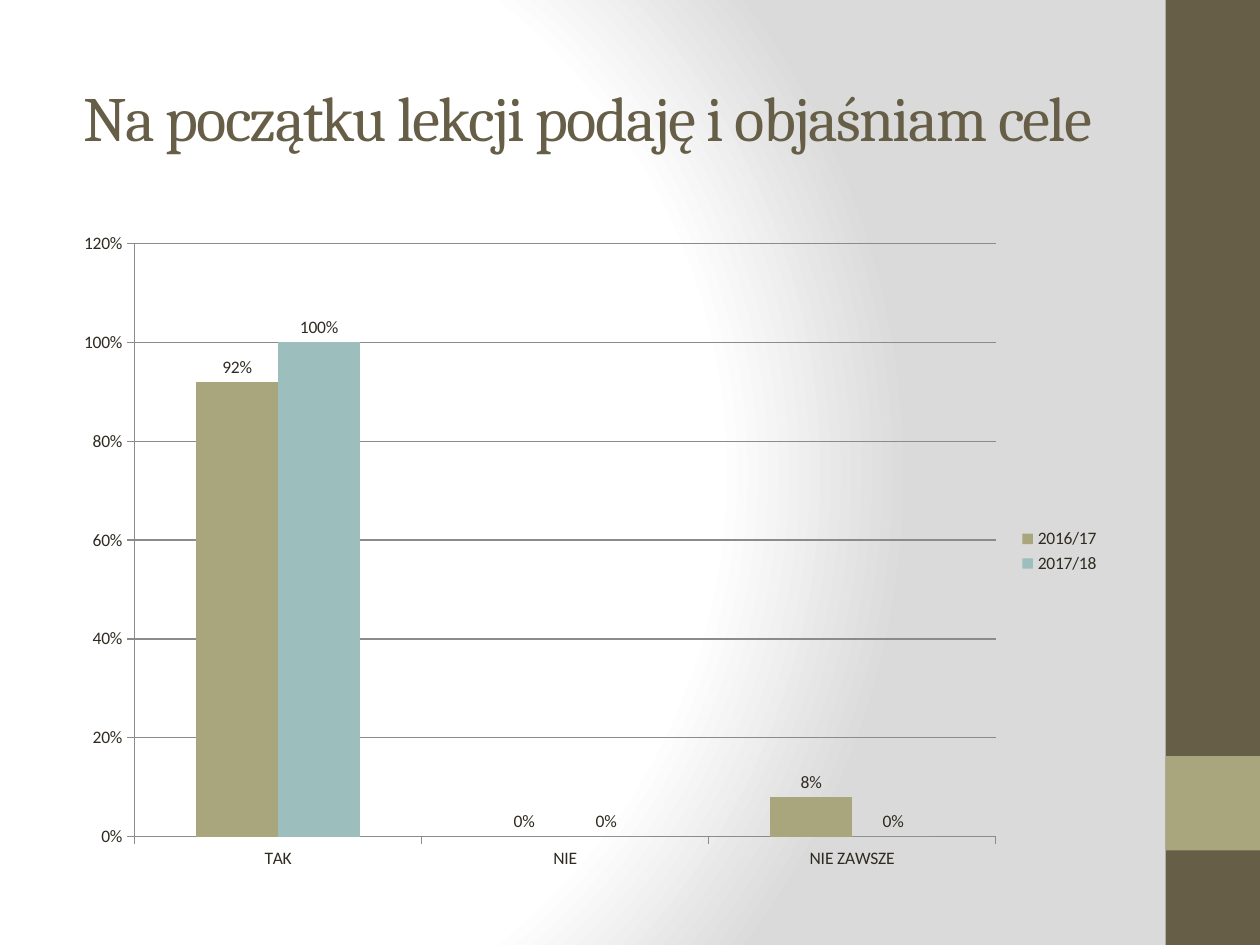
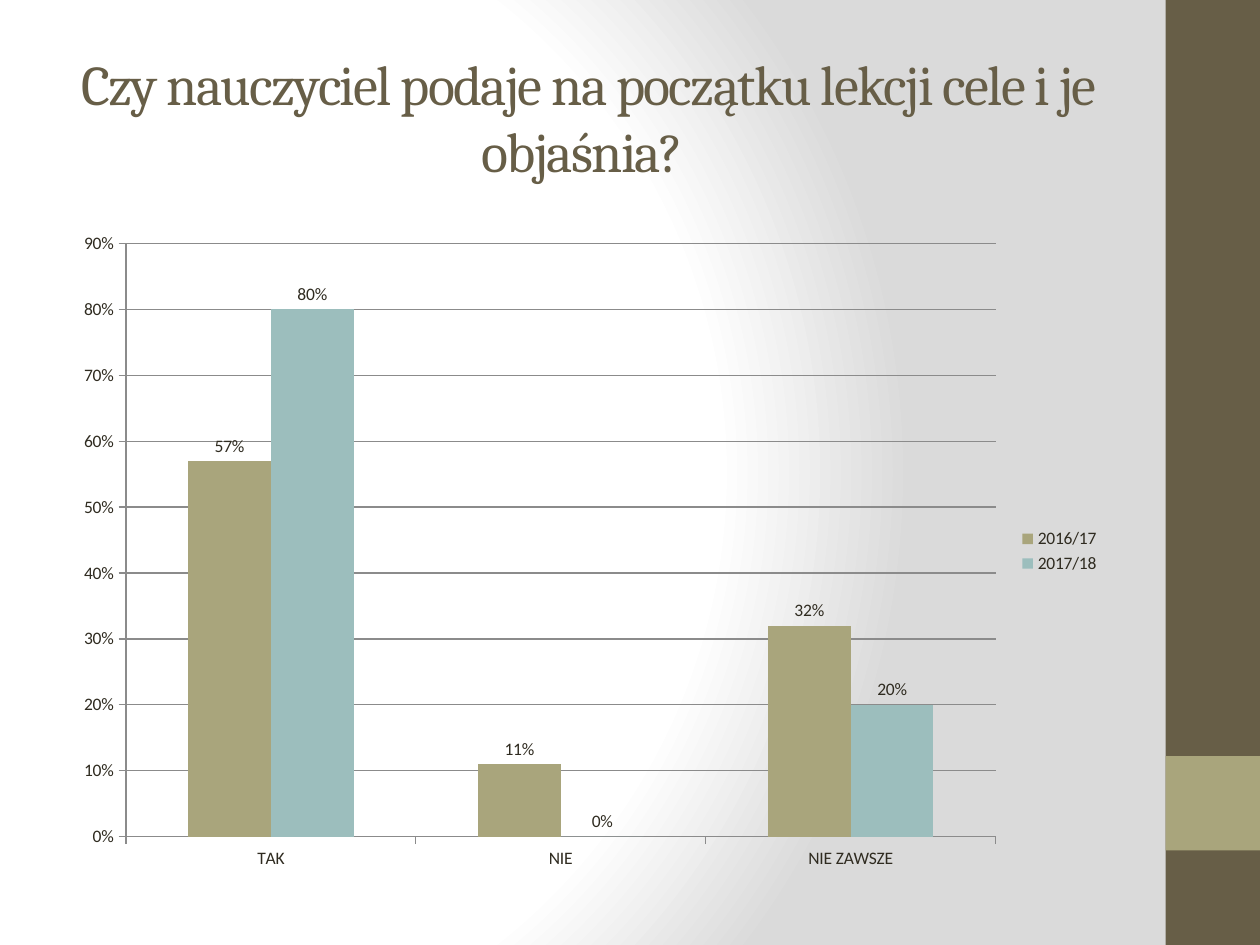
from dataclasses import dataclass

from lxml import etree
from pptx import Presentation
from pptx.chart.data import CategoryChartData
from pptx.dml.color import RGBColor
from pptx.enum.chart import XL_CHART_TYPE, XL_LABEL_POSITION, XL_LEGEND_POSITION, XL_TICK_MARK
from pptx.enum.shapes import MSO_SHAPE
from pptx.enum.text import MSO_ANCHOR, MSO_AUTO_SIZE, PP_ALIGN
from pptx.oxml import parse_xml
from pptx.oxml.ns import qn
from pptx.util import Inches, Pt

COLUMNS = XL_CHART_TYPE.COLUMN_CLUSTERED
LABEL_ABOVE = XL_LABEL_POSITION.OUTSIDE_END
LEGEND_RIGHT = XL_LEGEND_POSITION.RIGHT
TICK_OUT, TICK_NONE = XL_TICK_MARK.OUTSIDE, XL_TICK_MARK.NONE
RECTANGLE = MSO_SHAPE.RECTANGLE
MIDDLE, CENTER = MSO_ANCHOR.MIDDLE, PP_ALIGN.CENTER
NO_AUTOFIT = MSO_AUTO_SIZE.NONE
DRAWING_NS = "http://schemas.openxmlformats.org/drawingml/2006/main"

# The page is a grid of quarter-inch cells: 40 columns by 30 rows.
CELL = 0.25
PAGE_COLUMNS, PAGE_ROWS = 40, 30
CONTENT_LEFT, CONTENT_WIDTH = 2, 33.32
BAND_LEFT, BAND_WIDTH = 37, 3


@dataclass(frozen=True)
class Theme:
    heading_font: str = "Cambria"
    body_font: str = "Calibri"
    brown: str = "675E47"
    olive: str = "A9A57C"
    teal: str = "9CBEBD"
    ink: str = "2F2B20"
    rule: str = "8B8B8B"
    background_stops: tuple = ((0, "FFFFFF"), (75, "FFFFFF"), (100, "DADADA"))
    title_size: int = 36
    long_title_size: int = 32
    chart_size: int = 10
    rule_width: float = 0.75


THEME = Theme()
ANSWERS = ("TAK", "NIE", "NIE ZAWSZE")
YEARS = ("2016/17", "2017/18")
SURVEY = (
    {
        "title": "Na początku lekcji podaję i objaśniam cele",
        "title_size": THEME.title_size,
        "shares": ((0.92, 0, 0.08), (1, 0, 0)),
        "top": 1.2,
        "step": 0.2,
    },
    {
        "title": "Czy nauczyciel podaje na początku lekcji cele i je objaśnia? ",
        "title_size": THEME.long_title_size,
        "shares": ((0.57, 0.11, 0.32), (0.8, 0, 0.2)),
        "top": 0.9,
        "step": 0.1,
    },
)


def cells(*counts):
    return [Inches(count * CELL) for count in counts]


def style_font(font, name, size, color):
    font.name, font.size, font.bold = name, Pt(size), False
    font.color.rgb = RGBColor.from_string(color)


def write(frame, text, *, font, size, color, align, anchor, spacing=0):
    """Fill a text frame with one paragraph; spacing is in points per letter."""
    frame.word_wrap = True
    frame.auto_size = NO_AUTOFIT
    frame.vertical_anchor = anchor
    para = frame.paragraphs[0]
    para.alignment = align
    span = para.add_run()
    span.text = text
    style_font(span.font, font, size, color)
    span.font._element.set("spc", str(spacing * 100))


class SlideBuilder:
    def __init__(self, deck, theme):
        self.deck, self.theme, self.slide = deck, theme, None

    def start_page(self):
        self.slide = self.deck.slides.add_slide(self.deck.slide_layouts.get_by_name("Title Only"))
        self.background()
        self.band(0, PAGE_ROWS, self.theme.brown)
        self.band(24, 3, self.theme.olive)

    def background(self):
        """Radial gradient centred a fifth of the way across the page."""
        fill = self.slide.background.fill
        fill.gradient()
        properties = self.slide.element.find(".//" + qn("p:bgPr"))
        stops = "".join(
            f'<a:gs pos="{place * 1000}"><a:srgbClr val="{color}"/></a:gs>'
            for place, color in self.theme.background_stops
        )
        gradient = parse_xml(
            f'<a:gradFill xmlns:a="{DRAWING_NS}" rotWithShape="1"><a:gsLst>{stops}</a:gsLst>'
            '<a:path path="circle"><a:fillToRect l="20000" t="50000" r="100000" b="50000"/>'
            "</a:path></a:gradFill>"
        )
        properties.replace(properties.find(qn("a:gradFill")), gradient)
        if properties.find(qn("a:effectLst")) is None:
            etree.SubElement(properties, qn("a:effectLst"))

    def band(self, top, height, color):
        box = self.slide.shapes.add_shape(RECTANGLE, *cells(BAND_LEFT, top, BAND_WIDTH, height))
        box.shadow.inherit = False
        box.fill.solid()
        box.fill.fore_color.rgb = RGBColor.from_string(color)
        box.line.fill.background()

    def title(self, text, size):
        box = self.slide.shapes.title
        box.left, box.top, box.width, box.height = cells(CONTENT_LEFT, 1.2, CONTENT_WIDTH, 5)
        write(box.text_frame, text, font=self.theme.heading_font, size=size,
              color=self.theme.brown, align=CENTER, anchor=MIDDLE, spacing=-1)

    def rule(self, line):
        line.color.rgb = RGBColor.from_string(self.theme.rule)
        line.width = Pt(self.theme.rule_width)

    def column_chart(self, shares, top, step):
        data = CategoryChartData(number_format="0%")
        data.categories = ANSWERS
        for year, values in zip(YEARS, shares):
            data.add_series(year, values)
        chart = self.slide.shapes.add_chart(
            COLUMNS, *cells(CONTENT_LEFT, 7, CONTENT_WIDTH, 21), data).chart
        style_font(chart.font, self.theme.body_font, self.theme.chart_size, self.theme.ink)
        chart.has_title = False
        chart.has_legend = True
        chart.legend.position = LEGEND_RIGHT
        chart.legend.include_in_layout = False
        self.axes(chart, top, step)
        self.columns(chart.plots[0])

    def axes(self, chart, top, step):
        for axis in (chart.category_axis, chart.value_axis):
            axis.major_tick_mark, axis.minor_tick_mark = TICK_OUT, TICK_NONE
            self.rule(axis.format.line)
        scale = chart.value_axis
        scale.minimum_scale, scale.maximum_scale, scale.major_unit = 0, top, step
        scale.has_major_gridlines = True
        self.rule(scale.major_gridlines.format.line)
        scale.tick_labels.number_format = "0%"
        scale.tick_labels.number_format_is_linked = False

    def columns(self, plot):
        plot.gap_width, plot.overlap = 150, 0
        plot.vary_by_categories = False
        for series, color in zip(plot.series, (self.theme.olive, self.theme.teal)):
            series.format.fill.solid()
            series.format.fill.fore_color.rgb = RGBColor.from_string(color)
            series.invert_if_negative = False
            labels = series.data_labels
            labels.show_value = True
            labels.position = LABEL_ABOVE
            labels.number_format, labels.number_format_is_linked = "0%", False


def main():
    deck = Presentation()
    deck.slide_width, deck.slide_height = cells(PAGE_COLUMNS, PAGE_ROWS)
    builder = SlideBuilder(deck, THEME)
    for question in SURVEY:
        builder.start_page()
        builder.title(question["title"], question["title_size"])
        builder.column_chart(question["shares"], question["top"], question["step"])
    deck.save("out.pptx")


if __name__ == "__main__":
    main()
